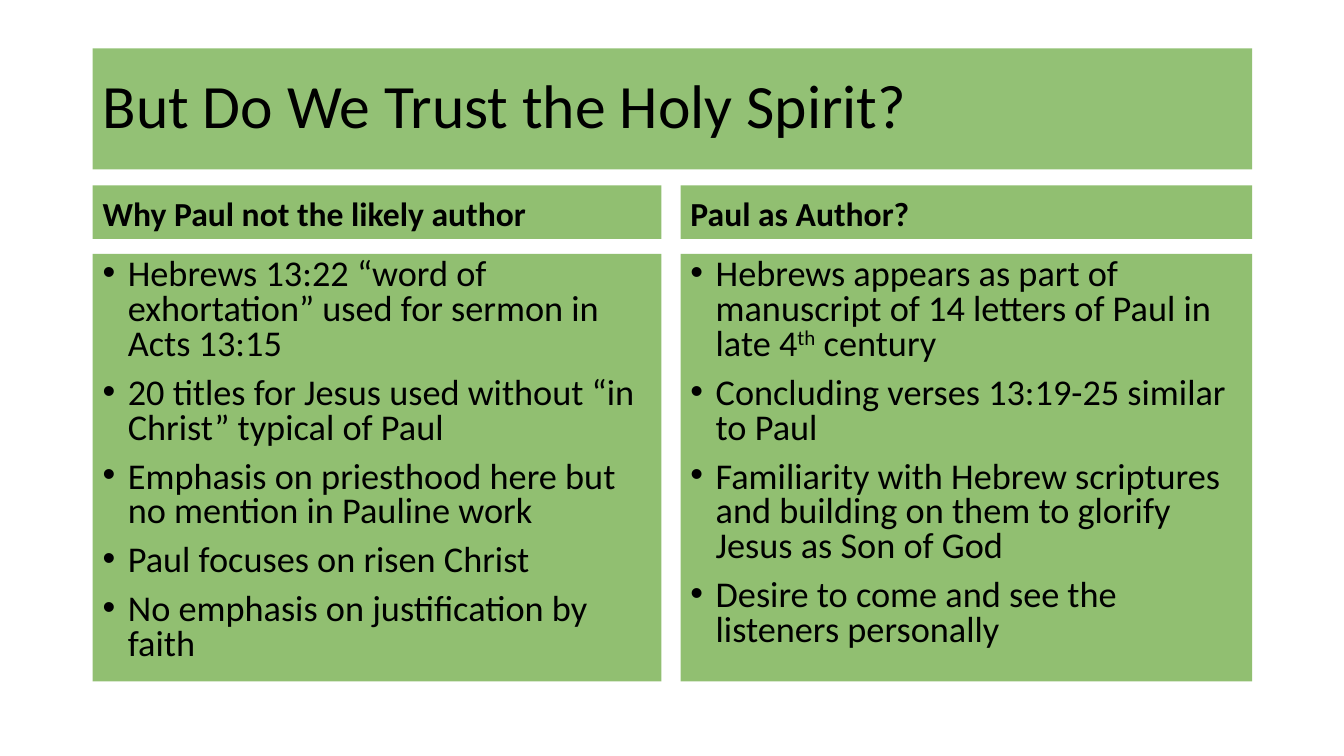
"""Builds a slide comparing arguments about Paul as author of Hebrews."""
from lxml import etree
from pptx import Presentation, util as u
from pptx.dml.color import RGBColor
from pptx.enum import shapes, text
from pptx.oxml import ns

COLOURS = {"panel": "70AD47", "text": "000000"}
FONT = "Calibri"
COLUMNS = {"full": (0.92, 11.5), "left": (0.92, 5.64), "right": (6.75, 5.67)}
ROWS = {"title": (0.48, 1.2), "heading": (1.84, 0.53), "points": (2.52, 4.24)}

ARGUMENTS = {
    "left": ("Why Paul not the likely author", [
        ["Hebrews 13:22 “word of exhortation” used for sermon in Acts 13:15"],
        ["20 titles for Jesus used without “in Christ” typical of Paul"],
        ["Emphasis on priesthood here but no mention in Pauline work"],
        ["Paul focuses on risen Christ"],
        ["No emphasis on justification by faith"],
    ]),
    "right": ("Paul as Author?", [
        ["Hebrews appears as part of manuscript of 14 letters of Paul in late 4",
         ("th", 30), " century"],
        ["Concluding verses 13:19-25 similar to Paul"],
        ["Familiarity with Hebrew scriptures and building on them to glorify "
         "Jesus as Son of God"],
        ["Desire to come and see the listeners personally"],
    ]),
}


def add_panel(page, column, row, anchor, opacity=77):
    (left, width), (top, height) = COLUMNS[column], ROWS[row]
    box = page.shapes.add_shape(
        shapes.MSO_SHAPE.RECTANGLE,
        *(u.Inches(length) for length in (left, top, width, height)))
    box.shadow.inherit = False
    box.line.fill.background()
    box.fill.solid()
    box.fill.fore_color.rgb = RGBColor.from_string(COLOURS["panel"])
    colour = box._element.spPr.find(".//" + ns.qn("a:srgbClr"))
    etree.SubElement(colour, ns.qn("a:alpha"), val=str(opacity * 1000))
    box.text_frame.word_wrap = True
    box.text_frame.vertical_anchor = anchor
    return box.text_frame


def add_span(para, words, size, bold=False, raised=0):
    span = para.add_run()
    span.text = words
    span.font.name = FONT
    span.font.size = u.Pt(size)
    span.font.bold = bold
    span.font.color.rgb = RGBColor.from_string(COLOURS["text"])
    if raised:
        span._r.get_or_add_rPr().set("baseline", str(raised * 1000))


def add_line(page, column, row, words, size, anchor, **style):
    frame = add_panel(page, column, row, anchor, style.get("opacity", 77))
    para = frame.paragraphs[0]
    para.alignment = text.PP_ALIGN.LEFT
    para.line_spacing = 0.9
    add_span(para, words, size, style.get("bold", False))


def add_bullet(para):
    properties = para._p.get_or_add_pPr()
    properties.set("marL", str(u.Inches(0.25)))
    properties.set("indent", str(u.Inches(-0.25)))
    etree.SubElement(properties, ns.qn("a:buFont"), typeface="Arial")
    etree.SubElement(properties, ns.qn("a:buChar"), char="•")


def add_points(page, column, points):
    frame = add_panel(page, column, "points", text.MSO_ANCHOR.TOP)
    for index, spans in enumerate(points):
        para = frame.add_paragraph() if index else frame.paragraphs[0]
        para.alignment = text.PP_ALIGN.LEFT
        para.line_spacing = 0.8
        para.space_before = u.Pt(10 if index else 0)
        add_bullet(para)
        for span in spans:
            words, raised = (span, 0) if isinstance(span, str) else span
            add_span(para, words, 25.9, raised=raised)


def main():
    deck = Presentation()
    deck.slide_width, deck.slide_height = u.Inches(13.33), u.Inches(7.5)
    page = deck.slides.add_slide(deck.slide_layouts[6])
    add_line(page, "full", "title", "But Do We Trust the Holy Spirit?", 44,
             text.MSO_ANCHOR.MIDDLE, opacity=75)
    for column, (heading, points) in ARGUMENTS.items():
        add_line(page, column, "heading", heading, 24,
                 text.MSO_ANCHOR.BOTTOM, bold=True)
        add_points(page, column, points)
    deck.save("out.pptx")


if __name__ == "__main__":
    main()
